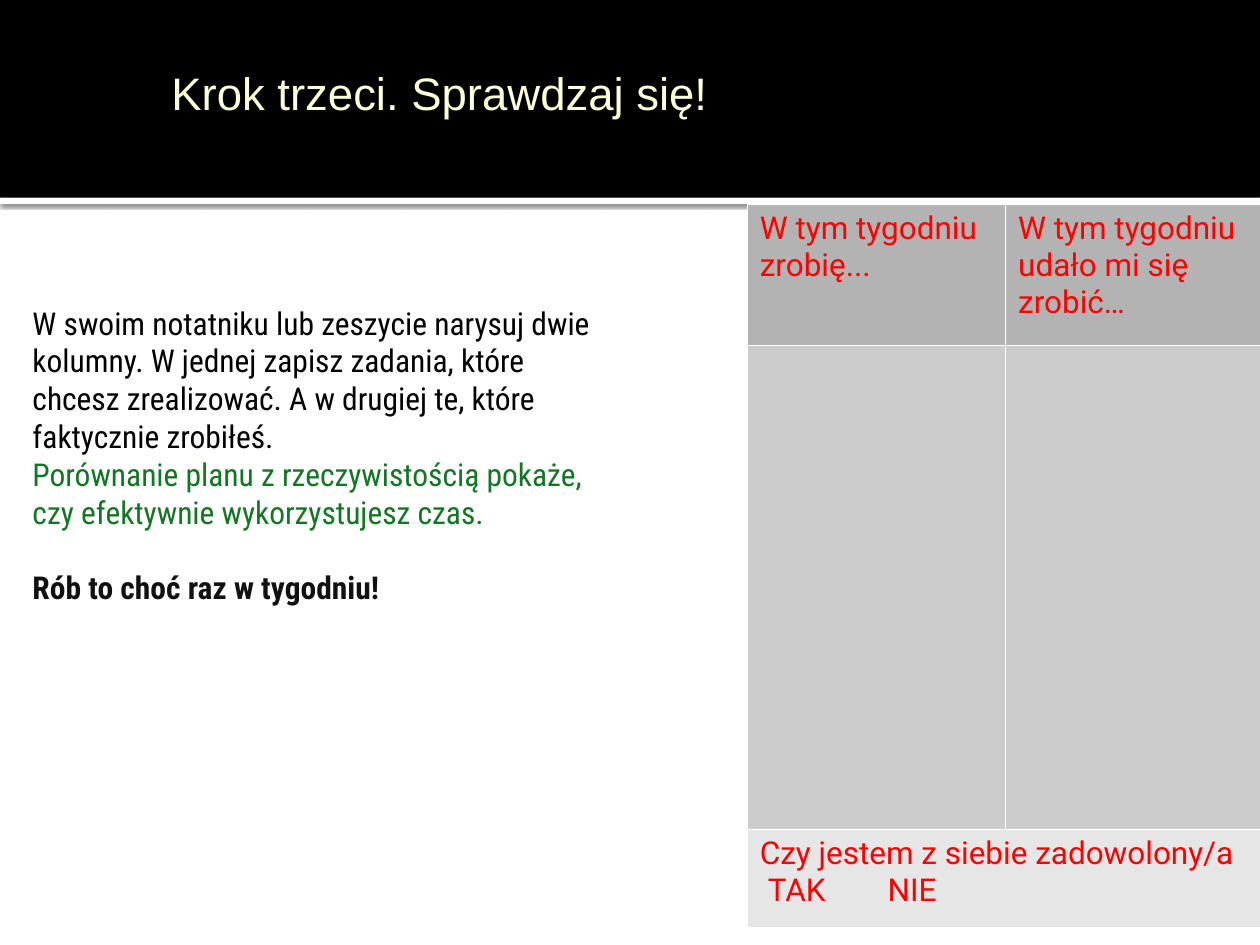
import pptx
import pptx.util
import pptx.dml.color
import pptx.enum.shapes
import pptx.enum.text
import pptx.oxml
import pptx.oxml.ns
import lxml.etree

Pt = pptx.util.Pt
NS = pptx.oxml.ns.nsdecls("a")


def rgb(value):
    return pptx.dml.color.RGBColor.from_string(value)


def style(paragraph, font_name, size, color, bold=False):
    for run in paragraph.runs:
        run.font.name = font_name
        run.font.size = Pt(size)
        run.font.color.rgb = rgb(color)
        run.font.bold = bold


deck = pptx.Presentation()
deck.slide_width, deck.slide_height = Pt(720), Pt(540)
slide = deck.slides.add_slide(deck.slide_layouts[5])
shapes = slide.shapes

# Header band with a shadowed white strip below it
for top, height, color in [(113, 3.6, "FFFFFF"), (0, 113, "000000")]:
    band = shapes.add_shape(pptx.enum.shapes.MSO_SHAPE.RECTANGLE, 0, Pt(top), Pt(720), Pt(height))
    band.fill.solid()
    band.fill.fore_color.rgb = rgb(color)
    band.line.fill.background()
    band.shadow.inherit = False
    if top:
        effects = band._element.spPr.find(pptx.oxml.ns.qn("a:effectLst"))
        effects.append(pptx.oxml.parse_xml(
            f'<a:outerShdw {NS} blurRad="{Pt(2.5)}" dist="{Pt(0.8)}" dir="5400000" rotWithShape="0">'
            '<a:srgbClr val="000000"><a:alpha val="60000"/></a:srgbClr></a:outerShdw>'))

# Instructions
instructions = shapes.add_textbox(Pt(11.5), Pt(170), Pt(335), Pt(309.6)).text_frame
instructions.word_wrap = True
instructions.text = "\n".join([
    "W swoim notatniku lub zeszycie narysuj dwie kolumny. W jednej zapisz zadania, "
    "które chcesz zrealizować. A w drugiej te, które faktycznie zrobiłeś.",
    "Porównanie planu z rzeczywistością pokaże, czy efektywnie wykorzystujesz czas.",
    "Rób to choć raz w tygodniu!",
])
for paragraph, color in zip(instructions.paragraphs, ["000000", "127622", "111111"]):
    style(paragraph, "Roboto Condensed", 18, color, bold=color == "111111")
instructions.paragraphs[-1].space_before = Pt(21.5)

# Weekly plan
rows = [
    (80.6, "B3B3B3", ["W tym tygodniu\nzrobię...", "W tym tygodniu\nudało mi się zrobić…"]),
    (276.5, "CCCCCC", ["", ""]),
    (56.2, "E6E6E6", ["Czy jestem z siebie zadowolony/a\n\tTAK\tNIE", ""]),
]
plan = shapes.add_table(3, 2, Pt(427), Pt(116.6), Pt(294.5), Pt(413.3)).table
plan.columns[0].width, plan.columns[1].width = Pt(147.6), Pt(146.9)
plan.cell(2, 0).merge(plan.cell(2, 1))
for r, (height, color, texts) in enumerate(rows):
    plan.rows[r].height = Pt(height)
    for c, text in enumerate(texts):
        cell = plan.cell(r, c)
        if text:
            cell.text_frame.text = text
        for paragraph in cell.text_frame.paragraphs:
            style(paragraph, "Roboto", 18, "FF0000")
        properties = cell._tc.get_or_add_tcPr()
        for side in ("lnL", "lnR", "lnT", "lnB"):
            properties.append(pptx.oxml.parse_xml(
                f'<a:{side} {NS} w="{Pt(0.06)}"><a:solidFill><a:srgbClr val="FFFFFF"/>'
                f'</a:solidFill></a:{side}>'))
        cell.fill.solid()
        cell.fill.fore_color.rgb = rgb(color)

answers = plan.cell(2, 0).text_frame.paragraphs[1]
tab_stops = lxml.etree.SubElement(answers._p.get_or_add_pPr(), pptx.oxml.ns.qn("a:tabLst"))
for position in (4.5, 73):
    lxml.etree.SubElement(tab_stops, pptx.oxml.ns.qn("a:tab"), pos=str(Pt(position)), algn="l")

# Title, brought in front of the header band
title = shapes.title
title.left, title.top, title.width, title.height = Pt(90.7), Pt(33.8), Pt(391), Pt(62.6)
title.text_frame.text = "Krok trzeci. Sprawdzaj się!"
title.text_frame.vertical_anchor = pptx.enum.text.MSO_ANCHOR.TOP
title.text_frame.paragraphs[0].alignment = pptx.enum.text.PP_ALIGN.LEFT
style(title.text_frame.paragraphs[0], "Arial", 26, "FFFFD7")
shapes._spTree.append(title._element)

deck.save("out.pptx")
